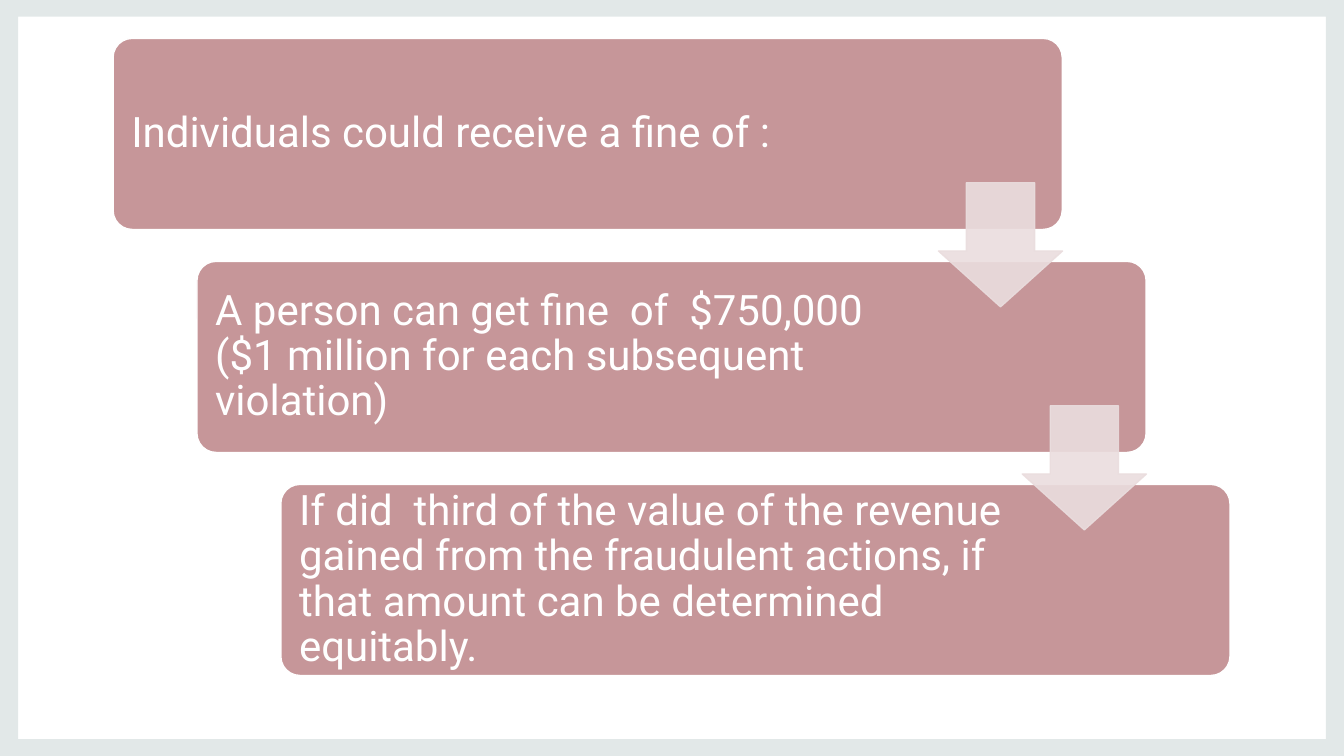
from dataclasses import dataclass

from lxml import etree
from pptx import Presentation
from pptx.dml.color import RGBColor
from pptx.enum.shapes import MSO_SHAPE
from pptx.enum.text import MSO_ANCHOR, PP_ALIGN
from pptx.oxml.ns import qn
from pptx.util import Pt


@dataclass(frozen=True)
class Theme:
    frame: RGBColor = RGBColor.from_string("E2E8E8")
    card: RGBColor = RGBColor.from_string("C69699")
    arrow: RGBColor = RGBColor.from_string("EADDDE")
    white: RGBColor = RGBColor.from_string("FFFFFF")
    font: str = "Roboto"
    text_size: int = 30
    line_width: int = 1
    arrow_opacity: int = 90


def paint(shape, fill, line):
    """Give the shape a flat fill and a thin outline, without a shadow."""
    shape.shadow.inherit = False
    shape.fill.solid()
    shape.fill.fore_color.rgb = fill
    shape.line.color.rgb = line
    shape.line.width = Pt(theme.line_width)


theme = Theme()
SLIDE_WIDTH, SLIDE_HEIGHT = 960, 540
FRAME_X, FRAME_Y = 12.7, 12.2
CARD_LEFT, CARD_TOP, CARD_WIDTH, CARD_HEIGHT = 80.8, 27.4, 678, 136.5
STEP_X, STEP_Y = 59.9, 159.3
TEXT_OFFSET, TEXT_HEIGHT, TEXT_INSET = 4, 128.5, 9
ARROW_LEFT, ARROW_TOP, ARROW_SIZE = 670.3, 130.5, 88.7

steps = [
    ("Individuals could receive a fine of :", 530.6),
    ("A person can get fine  of  $750,000 ($1 million for each subsequent violation)", 521.3),
    ("If did  third of the value of the revenue gained from the fraudulent actions, "
     "if that amount can be determined equitably.", 521.3),
]

deck = Presentation()
deck.slide_width, deck.slide_height = Pt(SLIDE_WIDTH), Pt(SLIDE_HEIGHT)
page = deck.slides.add_slide(deck.slide_layouts[6])
page.background.fill.solid()
page.background.fill.fore_color.rgb = theme.white

# Border: the outer edge, with the inner edge drawn the other way round
right, bottom = SLIDE_WIDTH - FRAME_X, SLIDE_HEIGHT - FRAME_Y
outline = page.shapes.build_freeform(0, 0, scale=Pt(1))
outline.add_line_segments([(SLIDE_WIDTH, 0), (SLIDE_WIDTH, SLIDE_HEIGHT), (0, SLIDE_HEIGHT)])
outline.move_to(FRAME_X, FRAME_Y)
outline.add_line_segments([(FRAME_X, bottom), (right, bottom), (right, FRAME_Y)])
frame = outline.convert_to_shape()
paint(frame, theme.frame, theme.frame)
frame.line.fill.background()

# Staircase of cards
for index, (wording, text_width) in enumerate(steps):
    left, top = CARD_LEFT + index * STEP_X, CARD_TOP + index * STEP_Y
    card = page.shapes.add_shape(MSO_SHAPE.ROUNDED_RECTANGLE, Pt(left), Pt(top),
                                 Pt(CARD_WIDTH), Pt(CARD_HEIGHT))
    card.adjustments[0] = 0.1
    paint(card, theme.card, theme.white)

    box = page.shapes.add_textbox(Pt(left + TEXT_OFFSET), Pt(top + TEXT_OFFSET),
                                  Pt(text_width), Pt(TEXT_HEIGHT))
    frame_text = box.text_frame
    frame_text.word_wrap = True
    frame_text.vertical_anchor = MSO_ANCHOR.MIDDLE
    frame_text.margin_left = frame_text.margin_right = Pt(TEXT_INSET)
    frame_text.margin_top = frame_text.margin_bottom = Pt(TEXT_INSET)
    para = frame_text.paragraphs[0]
    para.alignment = PP_ALIGN.LEFT
    para.line_spacing = 0.9
    span = para.add_run()
    span.text = wording
    span.font.name = theme.font
    span.font.size = Pt(theme.text_size)
    span.font.color.rgb = theme.white

# Translucent arrows from each card to the next
for index in range(len(steps) - 1):
    arrow = page.shapes.add_shape(MSO_SHAPE.DOWN_ARROW, Pt(ARROW_LEFT + index * STEP_X),
                                  Pt(ARROW_TOP + index * STEP_Y), Pt(ARROW_SIZE), Pt(ARROW_SIZE))
    arrow.adjustments[0] = 0.55
    arrow.adjustments[1] = 0.45
    paint(arrow, theme.arrow, theme.arrow)
    for color in arrow.element.spPr.iter(qn("a:srgbClr")):
        etree.SubElement(color, qn("a:alpha"), val=str(theme.arrow_opacity * 1000))

deck.save("out.pptx")
